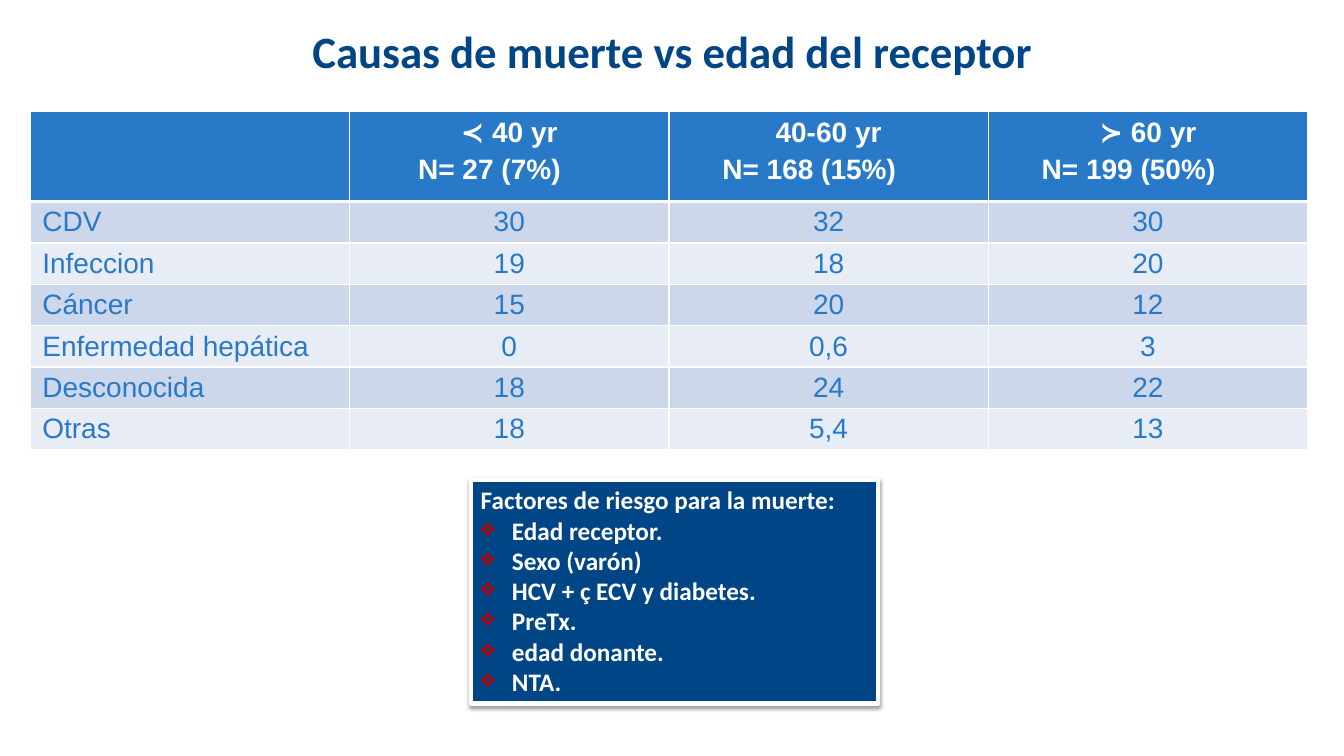
import pptx
import pptx.util
import pptx.dml.color
import pptx.enum.shapes
import pptx.enum.text
import pptx.oxml
import pptx.oxml.ns

Inches = pptx.util.Inches
Pt = pptx.util.Pt
ALIGN = pptx.enum.text.PP_ALIGN
ANCHOR = pptx.enum.text.MSO_ANCHOR

HUES = {
    "navy": "004586",
    "blue": "287AC8",
    "dark": "CDD7EB",
    "light": "E8ECF5",
    "white": "FFFFFF",
    "red": "C00000",
    "black": "000000",
}

HEADS = [
    ("≺ 40 yr", "N= 27 (7%)", 0.56),
    ("40-60 yr", "N= 168 (15%)", 0.41),
    ("≻ 60 yr", "N= 199 (50%)", 0.41),
]

CAUSES = [
    ("CDV", "30", "32", "30"),
    ("Infeccion", "19", "18", "20"),
    ("Cáncer", "15", "20", "12"),
    ("Enfermedad hepática", "0", "0,6", "3"),
    ("Desconocida", "18", "24", "22"),
    ("Otras", "18", "5,4", "13"),
]

RISKS = [
    "Edad receptor.",
    "Sexo (varón)",
    "HCV + ç ECV y diabetes.",
    "PreTx.",
    "edad donante.",
    "NTA.",
]


def color(name):
    return pptx.dml.color.RGBColor.from_string(HUES[name])


def append(node, xml):
    space = pptx.oxml.ns.nsdecls("a")
    node.append(pptx.oxml.parse_xml(xml.replace("NS", space, 1)))


def style(para, face, size, hue, bold):
    for run in para.runs:
        run.font.name = face
        run.font.size = Pt(size)
        run.font.bold = bold
        run.font.color.rgb = color(hue)


def indent(para, left, first=0):
    props = para._p.get_or_add_pPr()
    props.set("marL", str(Inches(left)))
    props.set("indent", str(Inches(first)))


def border(cell, top, bottom):
    props = cell._tc.get_or_add_tcPr()
    for side, width in zip("LRTB", (1, 1, top, bottom)):
        append(props, f'<a:ln{side} NS w="{Pt(width)}"><a:solidFill>'
                      f'<a:srgbClr val="{HUES["white"]}"/></a:solidFill></a:ln{side}>')


def format_cell(cell, fill, hue, bold, align, top, bottom):
    cell.margin_left = cell.margin_right = Inches(0.12)
    cell.margin_top = cell.margin_bottom = Inches(0.05)
    border(cell, top, bottom)
    cell.fill.solid()
    cell.fill.fore_color.rgb = color(fill)
    for para in cell.text_frame.paragraphs:
        para.alignment = align
        style(para, "Arial", 20, hue, bold)


def add_title(slide):
    title = slide.shapes.title
    title.left, title.top = Inches(0.67), Inches(0.17)
    title.width, title.height = Inches(12), Inches(0.66)
    frame = title.text_frame
    frame.text = "Causas de muerte vs edad del receptor"
    frame.vertical_anchor = ANCHOR.MIDDLE
    para = frame.paragraphs[0]
    para.alignment = ALIGN.CENTER
    style(para, "Calibri", 32, "navy", True)


def add_grid(slide):
    frame = slide.shapes.add_table(
        len(CAUSES) + 1, len(HEADS) + 1,
        Inches(0.3), Inches(1.11), Inches(12.67), Inches(3.35))
    table = frame.table
    for row in table.rows:
        row.height = Inches(0.41)
    table.rows[0].height = Inches(0.89)

    format_cell(table.cell(0, 0), "blue", "white", True, ALIGN.LEFT, 1, 3)
    for col, (age, count, left) in enumerate(HEADS, 1):
        cell = table.cell(0, col)
        cell.text_frame.text = f"{age}\n{count}"
        format_cell(cell, "blue", "white", True, ALIGN.CENTER, 1, 3)
        para = cell.text_frame.paragraphs[1]
        para.alignment = ALIGN.LEFT
        para.space_before = Pt(4)
        indent(para, left)

    for row, cause in enumerate(CAUSES, 1):
        fill = "dark" if row % 2 else "light"
        for col, text in enumerate(cause):
            cell = table.cell(row, col)
            cell.text_frame.text = text
            align = ALIGN.CENTER if col else ALIGN.LEFT
            format_cell(cell, fill, "blue", False, align, 3 if row == 1 else 1, 1)


def add_shadow(shape):
    shape.shadow.inherit = False
    effects = shape._element.spPr.find(pptx.oxml.ns.qn("a:effectLst"))
    append(effects, f'<a:outerShdw NS blurRad="{Pt(3.1)}" dist="{Pt(1.6)}" dir="5400000" '
                    f'rotWithShape="0"><a:srgbClr val="{HUES["black"]}">'
                    '<a:alpha val="38000"/></a:srgbClr></a:outerShdw>')


def add_bullet(para):
    indent(para, 0.31, -0.31)
    props = para._p.get_or_add_pPr()
    append(props, f'<a:buClr NS><a:srgbClr val="{HUES["red"]}"/></a:buClr>')
    append(props, '<a:buChar NS char="❖"/>')


def add_risks(slide):
    box = slide.shapes.add_shape(
        pptx.enum.shapes.MSO_SHAPE.RECTANGLE,
        Inches(4.67), Inches(4.76), Inches(4.04), Inches(2.22))
    box.fill.solid()
    box.fill.fore_color.rgb = color("navy")
    box.line.color.rgb = color("white")
    box.line.width = Pt(3)
    add_shadow(box)
    frame = box.text_frame
    frame.word_wrap = True
    frame.auto_size = pptx.enum.text.MSO_AUTO_SIZE.SHAPE_TO_FIT_TEXT
    frame.vertical_anchor = ANCHOR.TOP
    frame.text = "\n".join(["Factores de riesgo para la muerte:"] + RISKS)
    for spot, para in enumerate(frame.paragraphs):
        para.alignment = ALIGN.LEFT
        if spot:
            add_bullet(para)
        style(para, "Calibri", 18, "white", True)


def main():
    deck = pptx.Presentation()
    deck.slide_width, deck.slide_height = Inches(13.33), Inches(7.5)
    slide = deck.slides.add_slide(deck.slide_layouts[5])
    add_title(slide)
    add_grid(slide)
    add_risks(slide)
    deck.save("out.pptx")


if __name__ == "__main__":
    main()
